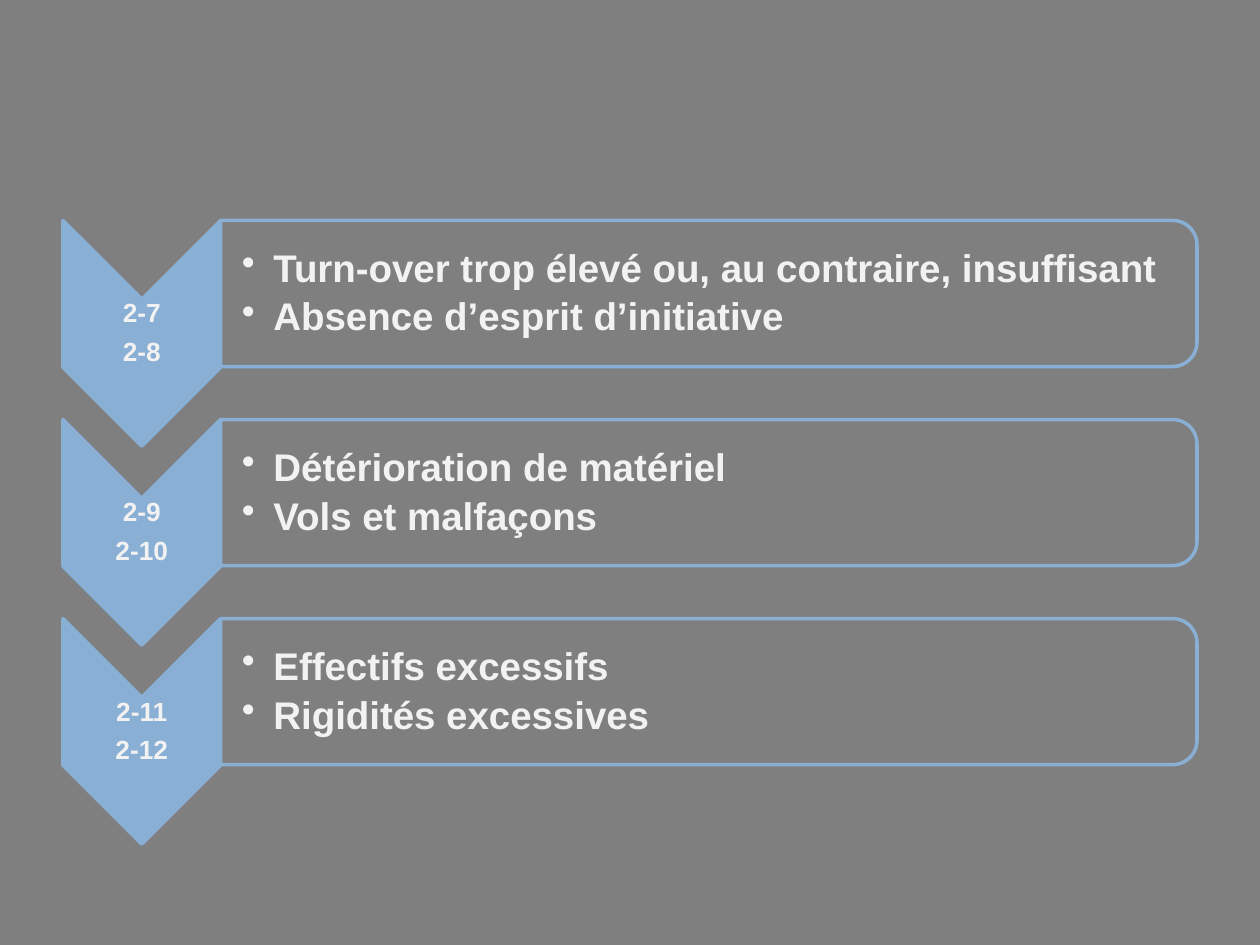
from dataclasses import dataclass

from lxml.etree import SubElement
from pptx import Presentation
from pptx.dml.color import RGBColor
from pptx.enum.shapes import MSO_SHAPE as Preset
from pptx.enum.text import MSO_ANCHOR as Anchor, PP_ALIGN as Align
from pptx.oxml.ns import qn
from pptx.util import Inches, Pt


@dataclass(frozen=True)
class Theme:
    background: RGBColor = RGBColor(0x7F, 0x7F, 0x7F)
    accent: RGBColor = RGBColor(0x89, 0xAF, 0xD5)
    text: RGBColor = RGBColor(0xF2, 0xF2, 0xF2)
    font: str = "Arial"
    label_size: float = 15
    body_size: float = 22
    line_width: float = 2
    panel_opacity: int = 90


@dataclass(frozen=True)
class Step:
    labels: tuple[str, str]
    points: tuple[str, str]


@dataclass(frozen=True)
class Box:
    left: float
    top: float
    width: float
    height: float

    def lengths(self) -> list[Inches]:
        return [Inches(v) for v in (self.left, self.top, self.width, self.height)]


THEME = Theme()
STEPS = (
    Step(("2-7", "2-8"),
         ("Turn-over trop élevé ou, au contraire, insuffisant",
          "Absence d’esprit d’initiative")),
    Step(("2-9", "2-10"), ("Détérioration de matériel", "Vols et malfaçons")),
    Step(("2-11", "2-12"), ("Effectifs excessifs", "Rigidités excessives")),
)
FIRST_TOP = 1.75
PITCH = 1.58
LEFT = 0.5
CHEVRON_WIDTH, CHEVRON_HEIGHT = 1.25, 1.79
PANEL_WIDTH, PANEL_HEIGHT = 7.75, 1.16


def add_turned_shape(slide, preset: Preset, box: Box, fill: RGBColor):
    """Add a shape turned a quarter clockwise so that it covers box."""
    offset = (box.width - box.height) / 2
    unturned = Box(box.left + offset, box.top - offset, box.height, box.width)
    shape = slide.shapes.add_shape(preset, *unturned.lengths())
    shape.rotation = 90
    shape.shadow.inherit = False
    shape.fill.solid()
    shape.fill.fore_color.rgb = fill
    shape.line.color.rgb = THEME.accent
    shape.line.width = Pt(THEME.line_width)
    return shape


def set_opacity(shape, percent: int) -> None:
    color = shape.fill._xPr.find(qn("a:solidFill"))[0]
    SubElement(color, qn("a:alpha")).set("val", str(percent * 1000))


def add_bullet(paragraph) -> None:
    properties = paragraph._p.get_or_add_pPr()
    properties.set("marL", str(Inches(0.25)))
    properties.set("indent", str(Inches(-0.25)))
    SubElement(properties, qn("a:buChar")).set("char", "•")


def add_text(slide, box: Box, lines: tuple[str, ...], size: float,
             space_after: float, inset: float, left_inset: float,
             bulleted: bool) -> None:
    frame = slide.shapes.add_textbox(*box.lengths()).text_frame
    frame.word_wrap = True
    frame.vertical_anchor = Anchor.MIDDLE
    frame.margin_left = Inches(left_inset)
    frame.margin_top = frame.margin_right = frame.margin_bottom = Inches(inset)
    for index, line in enumerate(lines):
        paragraph = frame.add_paragraph() if index else frame.paragraphs[0]
        if bulleted:
            add_bullet(paragraph)
        paragraph.alignment = Align.LEFT if bulleted else Align.CENTER
        paragraph.line_spacing = 0.9
        paragraph.space_after = Pt(space_after)
        run = paragraph.add_run()
        run.text = line
        run.font.name = THEME.font
        run.font.size = Pt(size)
        run.font.bold = True
        run.font.color.rgb = THEME.text


def add_step(slide, step: Step, top: float) -> None:
    chevron = Box(LEFT, top, CHEVRON_WIDTH, CHEVRON_HEIGHT)
    add_turned_shape(slide, Preset.CHEVRON, chevron, THEME.accent)
    add_text(slide, Box(LEFT, top + 0.63, CHEVRON_WIDTH, 0.54), step.labels,
             THEME.label_size, 6, 0.01, 0.01, bulleted=False)

    panel_left = LEFT + CHEVRON_WIDTH
    panel = add_turned_shape(slide, Preset.ROUND_2_SAME_RECTANGLE,
                             Box(panel_left, top, PANEL_WIDTH, PANEL_HEIGHT),
                             THEME.background)
    set_opacity(panel, THEME.panel_opacity)
    add_text(slide, Box(panel_left, top + 0.06, 7.69, 1.05), step.points,
             THEME.body_size, 4, 0.02, 0.17, bulleted=True)


def main() -> None:
    presentation = Presentation()
    presentation.slide_width = Inches(10)
    presentation.slide_height = Inches(7.5)
    slide = presentation.slides.add_slide(presentation.slide_layouts[6])
    slide.background.fill.solid()
    slide.background.fill.fore_color.rgb = THEME.background
    for index, step in enumerate(STEPS):
        add_step(slide, step, FIRST_TOP + index * PITCH)
    presentation.save("out.pptx")


if __name__ == "__main__":
    main()
